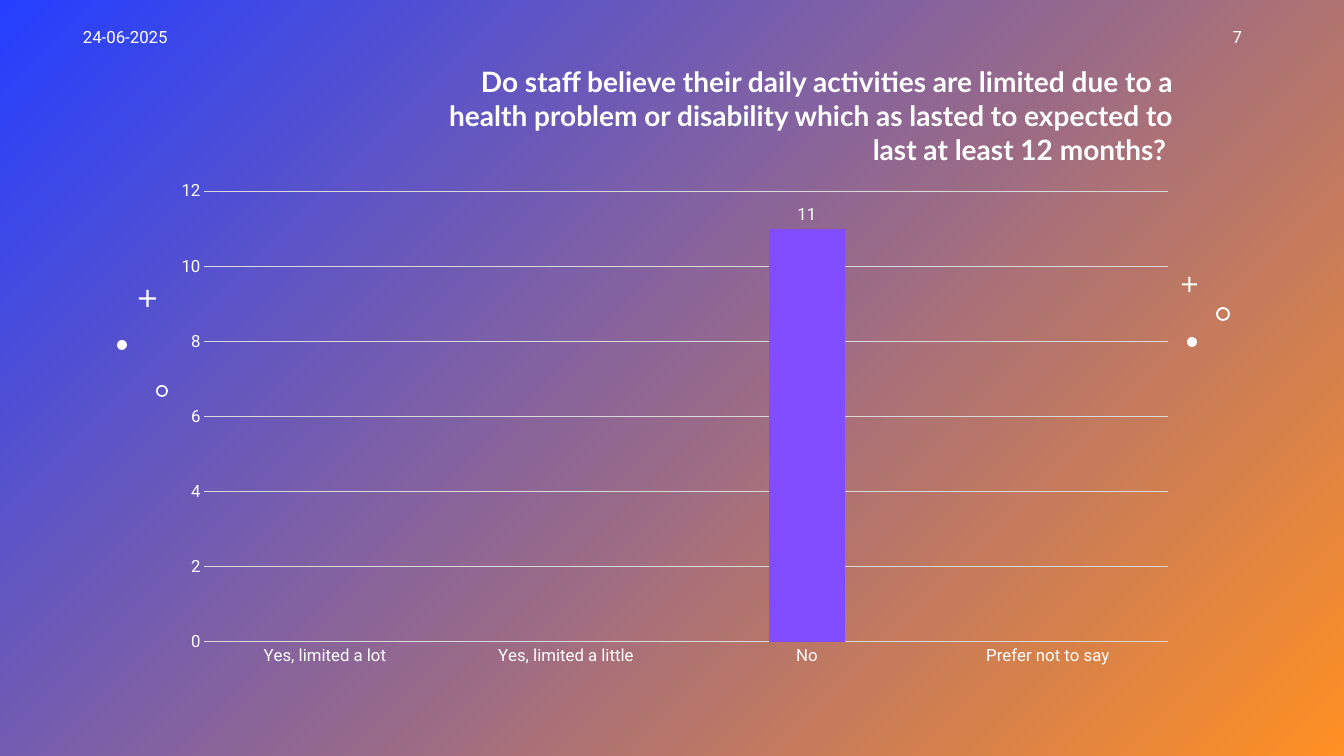
from pptx import Presentation
from pptx.chart.data import CategoryChartData
from pptx.dml.color import RGBColor
from pptx.enum.chart import XL_CHART_TYPE as ChartType, XL_LABEL_POSITION as LabelPosition, XL_TICK_MARK as TickMark
from pptx.enum.shapes import MSO_SHAPE as Shape
from pptx.enum.text import PP_ALIGN as Align
from pptx.util import Pt

EMU_PER_PX = 914400 / 100.8
WHITE, GRID = "FFFFFF", "D9D9D9"


def px(*lengths):
    return [round(length * EMU_PER_PX) for length in lengths]


def color(hex_value):
    return RGBColor.from_string(hex_value)


deck = Presentation()
deck.slide_width, deck.slide_height = px(1344, 756)
slide = deck.slides.add_slide(deck.slide_layouts[6])

backdrop = slide.background.fill
backdrop.gradient()
backdrop.gradient_angle = 315
for stop, (position, shade) in zip(backdrop.gradient_stops, [(0, "243FFF"), (1, "FF9022")]):
    stop.position = position
    stop.color.rgb = color(shade)

ornaments = [
    (Shape.OVAL, 1187, 337, 10, None),
    (Shape.CROSS, 1182, 277, 15, 0.43),
    (Shape.DONUT, 1216, 307, 14, 0.14),
    (Shape.CROSS, 139, 290, 17, 0.43),
    (Shape.OVAL, 117, 340, 10, None),
    (Shape.DONUT, 156, 385, 12, 0.14),
]
for kind, left, top, size, thickness in ornaments:
    ornament = slide.shapes.add_shape(kind, *px(left, top, size, size))
    ornament.shadow.inherit = False
    ornament.fill.solid()
    ornament.fill.fore_color.rgb = color(WHITE)
    ornament.line.fill.background()
    if thickness:
        ornament.adjustments[0] = thickness

answers = CategoryChartData()
answers.categories = ["Yes, limited a lot", "Yes, limited a little", "No", "Prefer not to say"]
answers.add_series("Series 1", [None, None, 11, None])
chart = slide.shapes.add_chart(ChartType.COLUMN_CLUSTERED, *px(161, 171, 1028, 505), answers).chart
chart.has_title = chart.has_legend = False

bars = chart.plots[0]
for name, value in {"gap_width": 219, "overlap": -27, "vary_by_categories": False, "has_data_labels": True}.items():
    setattr(bars, name, value)
bars.series[0].format.fill.solid()
bars.series[0].format.fill.fore_color.rgb = color("814DFF")
bars.data_labels.show_value = True
bars.data_labels.position = LabelPosition.OUTSIDE_END

scale = chart.value_axis
for name, value in {"minimum_scale": 0, "maximum_scale": 12, "major_unit": 2}.items():
    setattr(scale, name, value)
for axis in (scale, chart.category_axis):
    axis.major_tick_mark = axis.minor_tick_mark = TickMark.NONE
for line in (scale.major_gridlines.format.line, chart.category_axis.format.line):
    line.color.rgb = color(GRID)
    line.width = Pt(0.75)
scale.format.line.fill.background()

for font in (chart.font, scale.tick_labels.font, chart.category_axis.tick_labels.font, bars.data_labels.font):
    font.name = "Roboto"
    font.size = Pt(12)
    font.color.rgb = color(WHITE)

question = (
    "Do staff believe their daily activities are limited due to a health problem or disability "
    "which as lasted to expected to last at least 12 months? "
)
captions = [
    (question, (417, 60, 766, 112), Align.RIGHT, {"name": "Lato", "size": Pt(20), "bold": True}),
    ("24-06-2025", (73, 22, 302, 40), Align.LEFT, {"name": "Roboto", "size": Pt(12)}),
    ("7", (950, 22, 302, 40), Align.RIGHT, {"name": "Roboto", "size": Pt(12)}),
]
for wording, place, alignment, style in captions:
    frame = slide.shapes.add_textbox(*px(*place)).text_frame
    frame.word_wrap = True
    paragraph = frame.paragraphs[0]
    paragraph.alignment = alignment
    run = paragraph.add_run()
    run.text = wording
    run.font.color.rgb = color(WHITE)
    for name, value in style.items():
        setattr(run.font, name, value)

deck.save("out.pptx")
